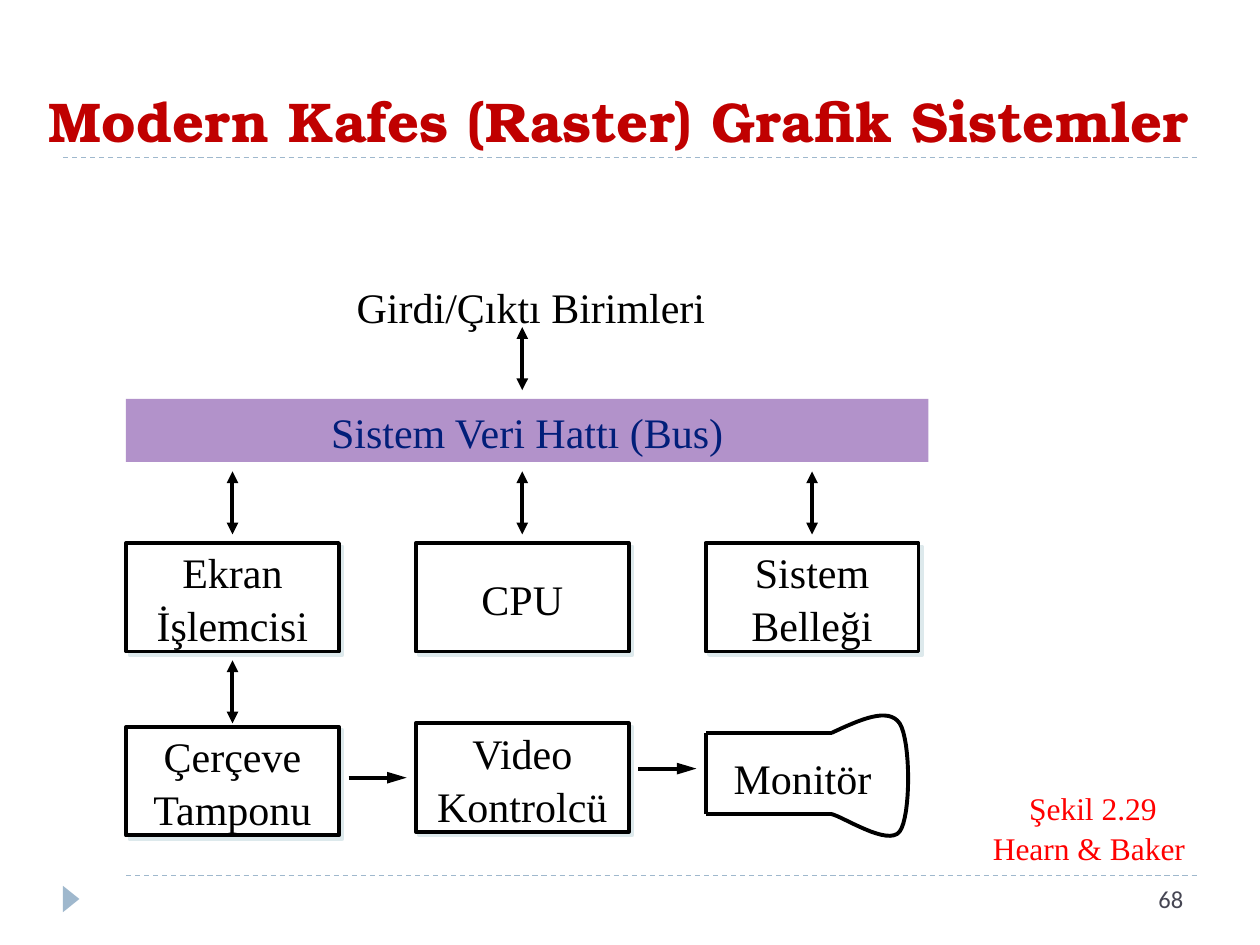
from lxml.etree import SubElement
from pptx import Presentation
from pptx.dml.color import RGBColor
from pptx.enum.dml import MSO_LINE as Dash
from pptx.enum.shapes import MSO_CONNECTOR as Link, MSO_SHAPE as Shape
from pptx.enum.text import MSO_ANCHOR as Anchor, PP_ALIGN as Align
from pptx.oxml.ns import qn
from pptx.util import Pt

BLACK = RGBColor(0x00, 0x00, 0x00)
WHITE = RGBColor(0xFF, 0xFF, 0xFF)
STEEL = RGBColor(0x9F, 0xB8, 0xCD)
CRIMSON = RGBColor(0xC0, 0x00, 0x00)
RED = RGBColor(0xFF, 0x00, 0x00)
LILAC = RGBColor(0xB2, 0x92, 0xCA)
NAVY = RGBColor(0x01, 0x1E, 0x79)
SLATE = RGBColor(0x46, 0x46, 0x53)
MIST = RGBColor(0xDD, 0xE9, 0xEC)

BODY = {"name": "Times New Roman", "size": Pt(24)}
NOTE = {"name": "Times New Roman", "size": Pt(18)}
HEAD = {"name": "TeX Gyre Bonum", "size": Pt(32), "bold": True}
PAGE = {"name": "Calibri", "size": Pt(14)}

deck = Presentation()
deck.slide_width, deck.slide_height = Pt(720), Pt(540)
slide = deck.slides.add_slide(deck.slide_layouts[6])
shapes = slide.shapes


def put(area, text="", font=BODY, ink=BLACK, fill=None, edge=None, kind=Shape.RECTANGLE,
        align=Align.CENTER, anchor=Anchor.MIDDLE, wrap=False, gap=1.05):
    area = [Pt(v) for v in area]
    if fill is None:
        shape = shapes.add_textbox(*area)
    else:
        shape = shapes.add_shape(kind, *area)
        shape.shadow.inherit = False
        shape.fill.solid()
        shape.fill.fore_color.rgb = fill
        if edge is None:
            shape.line.fill.background()
        else:
            shape.line.color.rgb = edge
            shape.line.width = Pt(2.25)
    if text:
        frame = shape.text_frame
        frame.text = text
        frame.word_wrap = wrap
        frame.vertical_anchor = anchor
        for para in frame.paragraphs:
            para.alignment = align
            para.line_spacing = gap
            for key, val in font.items():
                setattr(para.font, key, val)
            para.font.color.rgb = ink
    return shape


def rule(x1, y1, x2, y2, ink=BLACK, width=2.25, dash=None, ends=(), size="med"):
    link = shapes.add_connector(Link.STRAIGHT, Pt(x1), Pt(y1), Pt(x2), Pt(y2))
    link.line.color.rgb = ink
    link.line.width = Pt(width)
    if dash is not None:
        link.line.dash_style = dash
    stroke = link.line._get_or_add_ln()
    for end in ends:
        SubElement(stroke, qn("a:" + end), type="triangle", w="med", len=size)
    SubElement(link._element.spPr, qn("a:effectLst"))


rule(36, 500.4, 684, 500.4, STEEL, 0.75, Dash.DASH)
rule(36, 90, 684, 90, STEEL, 0.75, Dash.DASH)
put((25.2, 491, 45.4, 45.4), fill=WHITE)
mark = put((33.1, 509, 15.1, 9.4), fill=STEEL, kind=Shape.ISOSCELES_TRIANGLE)
mark.rotation = 90
put((20.9, 23.8, 676, 90), "Modern Kafes (Raster) Grafik Sistemler", HEAD, CRIMSON,
    align=Align.LEFT, wrap=True, gap=1.0)

COLS = [72, 237.6, 403.2]
WIDE, TALL = 121.7, 62
MIDS = [x + WIDE / 2 for x in COLS]

boxes = [
    (0, 310.3, "Ekran\nİşlemcisi"),
    (1, 310.3, "CPU"),
    (2, 310.3, "Sistem\nBelleği"),
    (0, 415.4, "Çerçeve\nTamponu"),
    (1, 413.3, "Video\nKontrolcü"),
]
for col, top, text in boxes:
    box = put((COLS[col], top, WIDE, TALL), text, fill=WHITE, edge=BLACK)
    effect = box._element.spPr.find(qn("a:effectLst"))
    shade = SubElement(effect, qn("a:outerShdw"), dist=str(Pt(2.8)), dir="2700000",
                       algn="ctr", rotWithShape="0")
    SubElement(shade, qn("a:srgbClr"), val=str(MIST))

put((72, 228, 458.6, 36), "Sistem Veri Hattı (Bus)", ink=NAVY, fill=LILAC)
put((195.8, 156.2, 215.3, 36.5), "Girdi/Çıktı Birimleri", anchor=Anchor.TOP)
put((411.8, 424.8, 93.6, 36.3), "Monitör", anchor=Anchor.TOP)

both = ("headEnd", "tailEnd")
for mid, top in [(MIDS[1], 187), *((mid, 269.4) for mid in MIDS), (MIDS[0], 377.4)]:
    rule(mid, top + 36, mid, top, ends=both)
for left, y in [(199.2, 444.4), (364.8, 439.2)]:
    rule(left, y, left + 33.2, y, ends=("tailEnd",), size="lg")

LEFT, NECK, ROOF, FLOOR = COLS[2], 475.2, 418.8, 465.2
rule(NECK, ROOF, LEFT, ROOF)
rule(NECK, FLOOR, LEFT, FLOOR)
rule(LEFT, FLOOR, LEFT, ROOF)

curves = [
    [(NECK, ROOF), (491.8, 411.1), (507.6, 403.9), (514.1, 413.3)],
    [(514.1, 413.3), (520.6, 423.4), (520.6, 466.6), (514.1, 475.2)],
    [(514.1, 475.2), (507.6, 483.8), (481.7, 466.6), (NECK, FLOOR)],
]
STEPS = 16
dots = []
for curve in curves:
    for step in range(1, STEPS + 1):
        t = step / STEPS
        parts = ((1 - t) ** 3, 3 * t * (1 - t) ** 2, 3 * t * t * (1 - t), t ** 3)
        dots.append([Pt(sum(p * dot[axis] for p, dot in zip(parts, curve))) for axis in (0, 1)])
pen = shapes.build_freeform(Pt(NECK), Pt(ROOF))
pen.add_line_segments(dots, close=False)
tube = pen.convert_to_shape()
tube.shadow.inherit = False
tube.fill.background()
tube.line.color.rgb = BLACK
tube.line.width = Pt(2.25)

put((559.4, 446.4, 130.3, 51.1), "Şekil 2.29\nHearn & Baker ", NOTE, RED, anchor=Anchor.TOP)
put((514.8, 501.8, 168.5, 28.8), "68", PAGE, SLATE, WHITE, align=Align.RIGHT,
    anchor=Anchor.TOP, wrap=True, gap=1.0)

deck.save("out.pptx")
